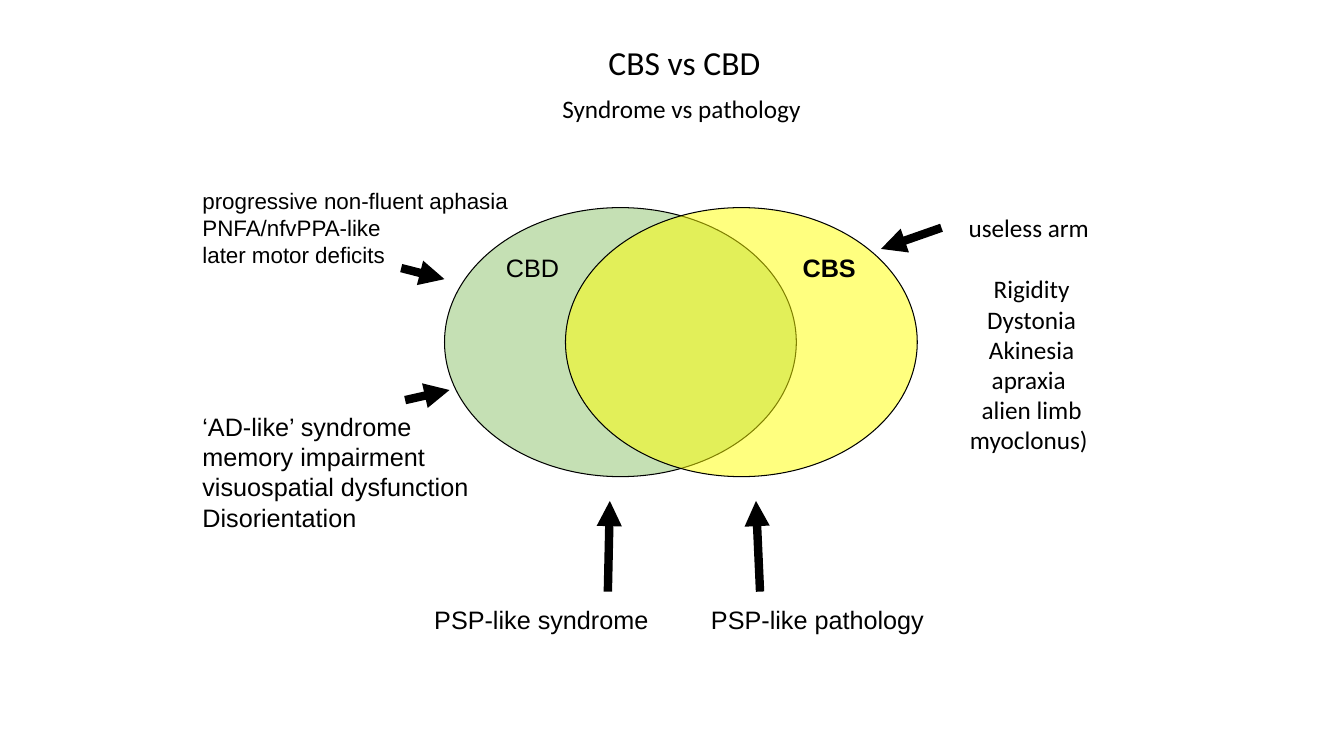
from lxml import etree
from pptx import Presentation
from pptx.dml.color import RGBColor
from pptx.enum.shapes import MSO_CONNECTOR, MSO_SHAPE
from pptx.enum.text import MSO_ANCHOR, PP_ALIGN
from pptx.oxml.ns import qn
from pptx.util import Pt

LEFT, CENTER, RIGHT = PP_ALIGN.LEFT, PP_ALIGN.CENTER, PP_ALIGN.RIGHT
TOP = MSO_ANCHOR.TOP
OVAL = MSO_SHAPE.OVAL
STRAIGHT = MSO_CONNECTOR.STRAIGHT

THEME = {
    "ink": RGBColor(0x00, 0x00, 0x00),
    "green": RGBColor(0xC5, 0xE0, 0xB4),
    "yellow": RGBColor(0xFF, 0xFF, 0x00),
    "heading": "Calibri",
    "body": "Arial",
    "title_size": Pt(24),
    "text_size": Pt(18),
    "small_size": Pt(16),
}


def write_lines(shape, lines, alignment, font_format, paragraph_format):
    frame = shape.text_frame
    frame.word_wrap = True
    frame.vertical_anchor = TOP
    for index, line in enumerate(lines):
        paragraph = frame.paragraphs[0] if index == 0 else frame.add_paragraph()
        paragraph.alignment = alignment
        for name, value in paragraph_format.items():
            setattr(paragraph, name, value)
        run = paragraph.add_run()
        run.text = line
        run.font.color.rgb = THEME["ink"]
        for name, value in font_format.items():
            setattr(run.font, name, value)
    return frame


presentation = Presentation()
presentation.slide_width = Pt(960)
presentation.slide_height = Pt(540)
slide = presentation.slides.add_slide(presentation.slide_layouts[6])

heading_font = {"name": THEME["heading"], "size": THEME["text_size"]}
body_font = {"name": THEME["body"], "size": THEME["text_size"]}
small_font = {"name": THEME["body"], "size": THEME["small_size"]}

title_box = slide.shapes.add_textbox(Pt(162.7), Pt(29.5), Pt(652.3), Pt(70))
title_frame = write_lines(
    title_box,
    ["CBS vs CBD", "Syndrome vs pathology "],
    CENTER,
    heading_font,
    {"line_spacing": 0.9, "space_before": Pt(10)},
)
title_frame.paragraphs[0].runs[0].font.size = THEME["title_size"]

circles = [
    ("CBD", 317.5, THEME["green"], None, LEFT, False),
    ("CBS", 403.9, THEME["yellow"], 50, RIGHT, True),
]
for label, left, color, opacity, alignment, bold in circles:
    circle = slide.shapes.add_shape(OVAL, Pt(left), Pt(148.3), Pt(251.3), Pt(192.2))
    circle.shadow.inherit = False
    circle.fill.solid()
    circle.fill.fore_color.rgb = color
    if opacity:
        color_element = circle.fill._xPr.find(qn("a:solidFill"))[0]
        etree.SubElement(color_element, qn("a:alpha"), val=str(opacity * 1000))
    circle.line.color.rgb = THEME["ink"]
    circle.line.width = Pt(0.75)
    write_lines(circle, [label], alignment, {**body_font, "bold": bold}, {})

symptoms = ["useless arm ", "Rigidity", "Dystonia", "Akinesia", "apraxia ", "alien limb", "myoclonus) "]
aphasia = ["progressive non-fluent aphasia", "PNFA/nfvPPA-like", "later motor deficits"]
dementia = ["‘AD-like’ syndrome", "memory impairment", "visuospatial dysfunction", "Disorientation"]
notes = [
    (symptoms, 684, 148.3, 105.8, 203.8, CENTER, heading_font),
    (aphasia, 137.5, 130.3, 360, 65.5, LEFT, small_font),
    (dementia, 137.5, 290.2, 230.4, 116.6, LEFT, body_font),
    (["PSP-like syndrome"], 303.1, 428, 180, 29, LEFT, body_font),
    (["PSP-like pathology"], 500.8, 428, 180, 29, LEFT, body_font),
]
for lines, left, top, width, height, alignment, font_format in notes:
    box = slide.shapes.add_textbox(Pt(left), Pt(top), Pt(width), Pt(height))
    frame = write_lines(box, lines, alignment, font_format, {})
    if lines is symptoms:
        frame.paragraphs[1].space_before = Pt(22)

arrows = [
    (672.5, 162.7, 629.3, 177.8),
    (434.2, 422.6, 435.6, 357.8),
    (542.9, 422.6, 540, 357.8),
    (286.6, 191.5, 317.5, 199.4),
    (289.4, 285.8, 321.1, 278.6),
]
for points in arrows:
    arrow = slide.shapes.add_connector(STRAIGHT, *[Pt(value) for value in points])
    arrow.line.color.rgb = THEME["ink"]
    arrow.line.width = Pt(6)
    etree.SubElement(arrow.line._get_or_add_ln(), qn("a:tailEnd"), type="triangle")
    etree.SubElement(arrow._element.spPr, qn("a:effectLst"))

presentation.save("out.pptx")
